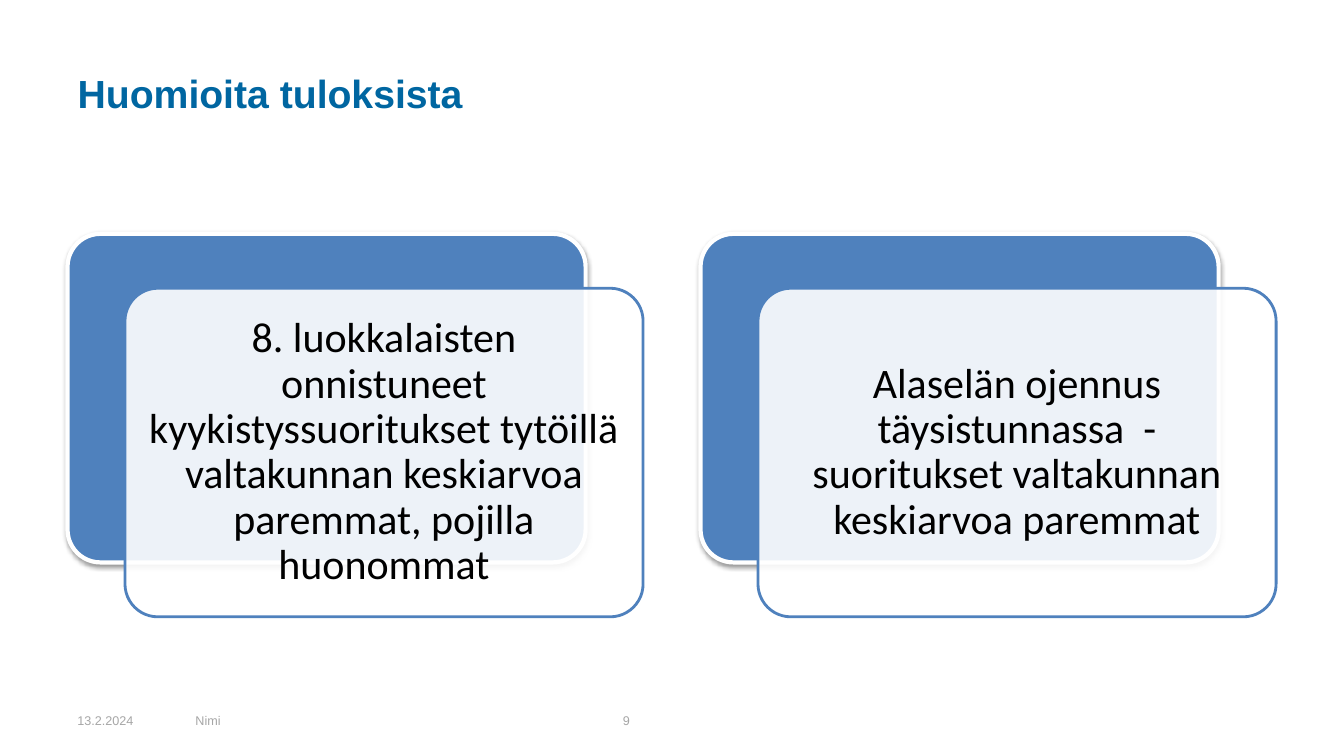
import pptx
import pptx.util
import pptx.dml.color
import pptx.enum.shapes
import pptx.enum.text
import pptx.oxml
import pptx.oxml.ns

Pt = pptx.util.Pt
RGBColor = pptx.dml.color.RGBColor
ALIGN = pptx.enum.text.PP_ALIGN
MIDDLE = pptx.enum.text.MSO_ANCHOR.MIDDLE

TITLE = "Huomioita tuloksista"
FINDINGS = [
    "8. luokkalaisten onnistuneet kyykistyssuoritukset tytöillä "
    "valtakunnan keskiarvoa paremmat, pojilla huonommat",
    "Alaselän ojennus täysistunnassa  - suoritukset valtakunnan "
    "keskiarvoa paremmat",
]
# text, left, width
FOOTER = [("13.2.2024", 48.24, 84.24), ("Nimi", 132.48, 303.84), ("9", 437.76, 223.92)]

TITLE_BLUE = RGBColor(0x00, 0x66, 0xA1)
CARD_BLUE = RGBColor(0x4F, 0x81, 0xBD)
FOOTER_GREY = RGBColor(0xA6, 0xA6, 0xA6)
WHITE = RGBColor(0xFF, 0xFF, 0xFF)
BLACK = RGBColor(0, 0, 0)

LEFT = 48.24
CARD_TOP = 167.04
CARD_WIDTH, CARD_HEIGHT = 370.08, 234.72
CARD_PITCH = 452.16
FRONT_SHIFT_X, FRONT_SHIFT_Y = 41.04, 38.88
FOOTER_TOP, FOOTER_HEIGHT = 500.4, 28.8
CARD_MARGIN = 8.5

SHADOW = (
    '<a:outerShdw %s blurRad="%d" dist="%d" dir="5400000" rotWithShape="0">'
    '<a:srgbClr val="000000"><a:alpha val="38000"/></a:srgbClr></a:outerShdw>'
) % (pptx.oxml.ns.nsdecls("a"), Pt(3.1), Pt(1.6))


def write(box, text, font_name, size, color, align=ALIGN.LEFT, bold=False):
    frame = box.text_frame
    frame.word_wrap = True
    frame.auto_size = pptx.enum.text.MSO_AUTO_SIZE.NONE
    frame.vertical_anchor = MIDDLE
    para = frame.paragraphs[0]
    para.alignment = align
    span = para.add_run()
    span.text = text
    span.font.name = font_name
    span.font.size = Pt(size)
    span.font.bold = bold
    span.font.color.rgb = color
    return para


def add_card(page, left, top, fill, line, line_width):
    card = page.shapes.add_shape(
        pptx.enum.shapes.MSO_SHAPE.ROUNDED_RECTANGLE,
        Pt(left), Pt(top), Pt(CARD_WIDTH), Pt(CARD_HEIGHT))
    card.adjustments[0] = 0.1
    card.shadow.inherit = False
    card.fill.solid()
    card.fill.fore_color.rgb = fill
    card.line.color.rgb = line
    card.line.width = Pt(line_width)
    return card


def add_finding(page, left, text):
    """Add a shadowed back card and a translucent front card with the text."""
    back = add_card(page, left, CARD_TOP, CARD_BLUE, WHITE, 3)
    effects = back._element.spPr.find(pptx.oxml.ns.qn("a:effectLst"))
    effects.append(pptx.oxml.parse_xml(SHADOW))

    front = add_card(page, left + FRONT_SHIFT_X, CARD_TOP + FRONT_SHIFT_Y,
                     WHITE, CARD_BLUE, 2)
    fill = front._element.spPr.find(pptx.oxml.ns.qn("a:solidFill"))
    fill[0].append(pptx.oxml.parse_xml(
        '<a:alpha %s val="90000"/>' % pptx.oxml.ns.nsdecls("a")))
    frame = front.text_frame
    frame.margin_left = frame.margin_right = Pt(CARD_MARGIN)
    frame.margin_top = frame.margin_bottom = Pt(CARD_MARGIN)
    para = write(front, text, "Calibri", 30, BLACK, ALIGN.CENTER)
    para.line_spacing = 0.9


def main():
    deck = pptx.Presentation()
    deck.slide_width, deck.slide_height = Pt(960), Pt(540)
    page = deck.slides.add_slide(deck.slide_layouts[5])

    title = page.shapes.title
    title.left, title.top = Pt(LEFT), Pt(21.6)
    title.width, title.height = Pt(864), Pt(90)
    write(title, TITLE, "Arial", 28, TITLE_BLUE, bold=True)

    for text, left, width in FOOTER:
        box = page.shapes.add_textbox(
            Pt(left), Pt(FOOTER_TOP), Pt(width), Pt(FOOTER_HEIGHT))
        write(box, text, "Arial", 9, FOOTER_GREY)

    for index, text in enumerate(FINDINGS):
        add_finding(page, LEFT + index * CARD_PITCH, text)

    deck.save("out.pptx")


if __name__ == "__main__":
    main()
